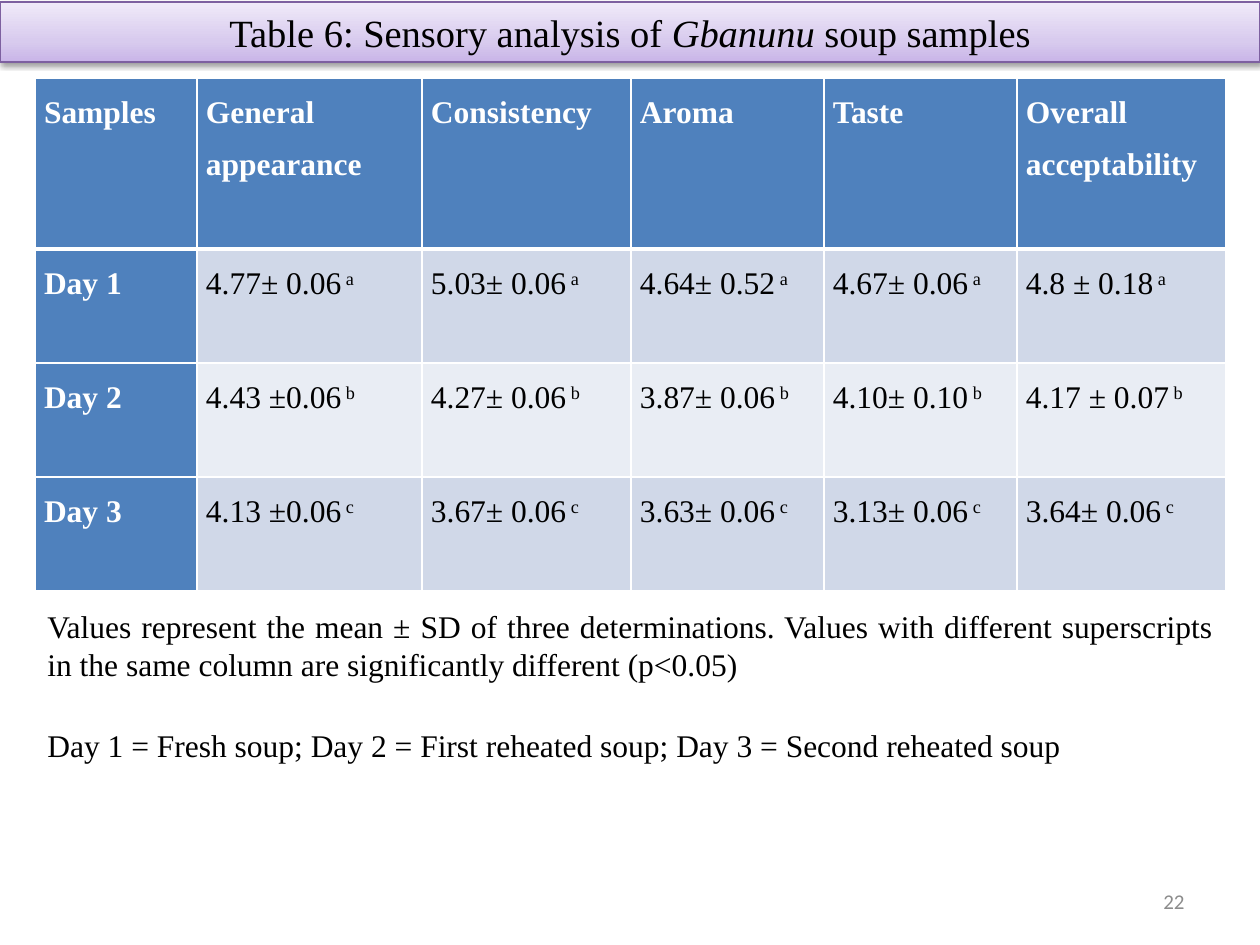
from copy import deepcopy

from lxml import etree
from pptx import Presentation
from pptx import util as u
from pptx.dml.color import RGBColor
from pptx.enum import shapes, text
from pptx.oxml.ns import qn

PX = 914400 / 126
SERIF = "Times New Roman"
BLACK, WHITE, BLUE = "000000", "FFFFFF", "4F81BD"
BANDS = ["D0D8E8", "E9EDF4"]
LEFT, WIDTH = 35, 1191

TITLE = [("Table 6: Sensory analysis of ", False), ("Gbanunu", True), (" soup samples", False)]
TITLE_STOPS = [(0, "C9B5E8"), (0.35, "D8CBEE"), (1, "F0EAF9")]
HEADERS = ["Samples", "General appearance", "Consistency", "Aroma", "Taste", "Overall acceptability"]
DAYS = [  # label, superscript, values
    ("Day 1", "a", ["4.77± 0.06", "5.03± 0.06", "4.64± 0.52", "4.67± 0.06", "4.8 ± 0.18"]),
    ("Day 2", "b", ["4.43 ±0.06", "4.27± 0.06", "3.87± 0.06", "4.10± 0.10", "4.17 ± 0.07"]),
    ("Day 3", "c", ["4.13 ±0.06", "3.67± 0.06", "3.63± 0.06", "3.13± 0.06", "3.64± 0.06"]),
]
COLUMN_WIDTHS = [162, 225, 209, 193, 193, 209]
ROW_HEIGHTS = [171, 114, 114, 114]
NOTES = [  # top, height, line spacing, wording
    (601, 111, 1.0, "Values represent the mean ± SD of three determinations. Values with "
                    "different superscripts in the same column are significantly different (p<0.05)"),
    (701, 70, 1.5, "Day 1 = Fresh soup; Day 2 = First reheated soup; Day 3 = Second reheated soup"),
]


def px(*lengths):
    return [u.Emu(round(length * PX)) for length in lengths]


def rgb(value):
    return RGBColor.from_string(value)


def add_run(paragraph, wording, size=18, color=BLACK, font=SERIF, bold=False, italic=False):
    run = paragraph.add_run()
    run.text = wording
    run.font.name, run.font.size = font, u.Pt(size)
    run.font.bold, run.font.italic = bold, italic
    run.font.color.rgb = rgb(color)
    return run


def add_color(parent, value):
    return etree.SubElement(parent, qn("a:srgbClr"), val=value)


def add_title(slide):
    bar = slide.shapes.add_shape(shapes.MSO_SHAPE.RECTANGLE, *px(0, 2, 1260, 60))
    bar.line.color.rgb, bar.line.width = rgb("7D60A0"), u.Pt(0.75)
    bar.fill.gradient()
    bar.fill.gradient_angle = 90
    stop_list = bar._element.spPr.find(".//" + qn("a:gsLst"))
    stop_list.append(deepcopy(stop_list[0]))
    for stop, (position, color) in zip(bar.fill.gradient_stops, TITLE_STOPS):
        stop.position, stop.color.rgb = position, rgb(color)

    bar.shadow.inherit = False
    effects = bar._element.spPr.find(qn("a:effectLst"))
    shadow = etree.SubElement(effects, qn("a:outerShdw"), blurRad=str(u.Pt(3.1)),
                              dist=str(u.Pt(1.6)), dir="5400000", rotWithShape="0")
    etree.SubElement(add_color(shadow, BLACK), qn("a:alpha"), val="38000")

    frame = bar.text_frame
    frame.vertical_anchor = text.MSO_ANCHOR.MIDDLE
    frame.paragraphs[0].alignment = text.PP_ALIGN.CENTER
    for wording, italic in TITLE:
        add_run(frame.paragraphs[0], wording, size=22, italic=italic)


def set_borders(cell, top, bottom):
    """Draw white edges; they must precede the fill in the cell's XML."""
    properties = cell._tc.get_or_add_tcPr()
    for index, (side, points) in enumerate([("L", 1), ("R", 1), ("T", top), ("B", bottom)]):
        edge = etree.Element(qn("a:ln" + side), w=str(u.Pt(points)))
        add_color(etree.SubElement(edge, qn("a:solidFill")), WHITE)
        properties.insert(index, edge)


def fill_cell(cell, row, column, wording, superscript):
    heading = row == 0 or column == 0
    cell.fill.solid()
    cell.fill.fore_color.rgb = rgb(BLUE if heading else BANDS[(row - 1) % 2])
    cell.margin_left, cell.margin_right, cell.margin_top, cell.margin_bottom = px(9, 9, 0, 0)
    set_borders(cell, top=3 if row == 1 else 1, bottom=3 if row == 0 else 1)
    paragraph = cell.text_frame.paragraphs[0]
    paragraph.alignment, paragraph.line_spacing = text.PP_ALIGN.JUSTIFY, 1.5
    add_run(paragraph, wording, color=WHITE if heading else BLACK, bold=heading)
    if not heading:
        mark = add_run(paragraph, " " + superscript)
        mark._r.get_or_add_rPr().set("baseline", "30000")


def add_scores(slide):
    frame = slide.shapes.add_table(len(ROW_HEIGHTS), len(COLUMN_WIDTHS),
                                   *px(LEFT, 78, WIDTH, sum(ROW_HEIGHTS)))
    table = frame.table
    table.first_col = True
    for column, width in zip(table.columns, px(*COLUMN_WIDTHS)):
        column.width = width
    for row, height in zip(table.rows, px(*ROW_HEIGHTS)):
        row.height = height
    lines = [("", HEADERS)] + [(mark, [day] + values) for day, mark, values in DAYS]
    for r, (mark, wordings) in enumerate(lines):
        for c, wording in enumerate(wordings):
            fill_cell(table.cell(r, c), r, c, wording, mark)


def add_text(slide, box, wording, alignment, spacing=1.0, anchor=text.MSO_ANCHOR.TOP, **style):
    frame = slide.shapes.add_textbox(*px(*box)).text_frame
    frame.word_wrap, frame.vertical_anchor = True, anchor
    paragraph = frame.paragraphs[0]
    paragraph.alignment, paragraph.line_spacing = alignment, spacing
    add_run(paragraph, wording, **style)


def main():
    deck = Presentation()
    deck.slide_width, deck.slide_height = px(1260, 945)
    slide = deck.slides.add_slide(deck.slide_layouts[6])
    add_title(slide)
    for top, height, spacing, wording in NOTES:
        add_text(slide, (LEFT, top, WIDTH, height), wording, text.PP_ALIGN.JUSTIFY, spacing)
    add_scores(slide)
    add_text(slide, (903, 876, 294, 50), "22", text.PP_ALIGN.RIGHT,
             anchor=text.MSO_ANCHOR.MIDDLE, size=12, color="8C8C8C", font="Calibri")
    deck.save("out.pptx")


if __name__ == "__main__":
    main()
